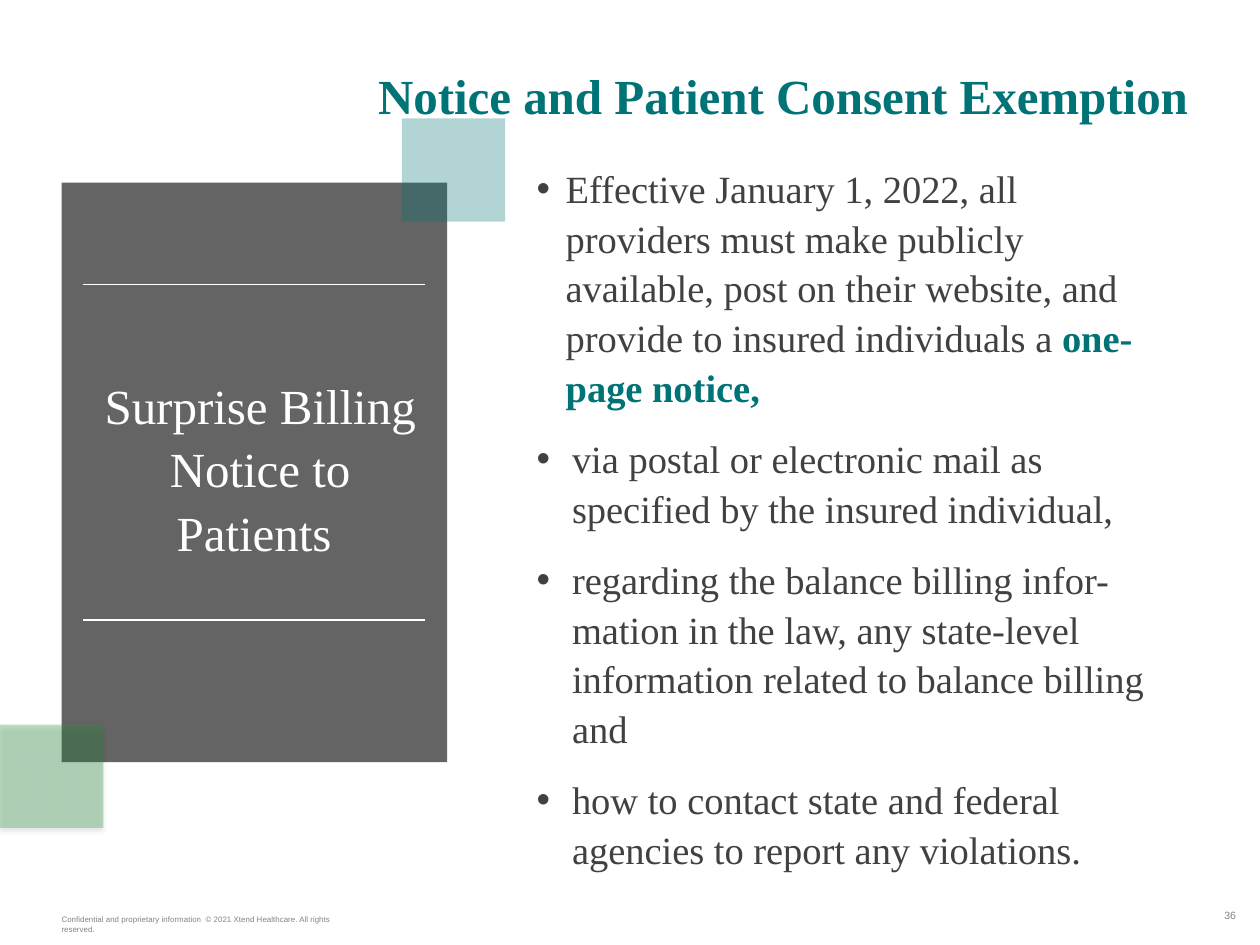
from dataclasses import dataclass

from lxml import etree
from pptx import Presentation
from pptx.dml.color import RGBColor
from pptx.enum.shapes import MSO_CONNECTOR, MSO_SHAPE
from pptx.enum.text import MSO_ANCHOR, MSO_AUTO_SIZE, PP_ALIGN
from pptx.oxml.ns import qn
from pptx.util import Inches, Pt

RECT = MSO_SHAPE.RECTANGLE
LINE = MSO_CONNECTOR.STRAIGHT
TOP, MIDDLE = MSO_ANCHOR.TOP, MSO_ANCHOR.MIDDLE
LEFT, CENTER, RIGHT = PP_ALIGN.LEFT, PP_ALIGN.CENTER, PP_ALIGN.RIGHT


@dataclass(frozen=True)
class Theme:
    serif: str = "Times New Roman"
    sans: str = "Arial"
    teal: str = "007377"
    green: str = "2C9942"
    panel: str = "4A4A4A"
    ink: str = "414141"
    gray: str = "838383"
    white: str = "FFFFFF"
    head: float = 28
    body: float = 22
    page: float = 6
    foot: float = 4.5
    lead: float = 1.08
    gap: float = 12


T = Theme()

# Each point is a list of (text, stressed) runs
POINTS = [
    [("Effective January 1, 2022, all providers must make publicly available, "
      "post on their website, and provide to insured individuals a ", False),
     ("one-page notice,", True)],
    [("via postal or electronic mail as specified by the insured individual,", False)],
    [("regarding the balance billing infor-mation in the law, any state-level "
      "information related to balance billing and", False)],
    [("how to contact state and federal agencies to report any violations.", False)],
]


def place(shape, box):
    shape.left, shape.top, shape.width, shape.height = map(Inches, box)


def frame(shape, anchor=TOP, pad=(0.1, 0.05)):
    tf = shape.text_frame
    tf.word_wrap = True
    tf.auto_size = MSO_AUTO_SIZE.NONE
    tf.vertical_anchor = anchor
    tf.margin_left = tf.margin_right = Inches(pad[0])
    tf.margin_top = tf.margin_bottom = Inches(pad[1])
    return tf


def add_run(para, text, size, color, font=T.serif, bold=False):
    run = para.add_run()
    run.text = text
    run.font.name = font
    run.font.size = Pt(size)
    run.font.bold = bold
    run.font.color.rgb = RGBColor.from_string(color)


def write(tf, text, size, color, font=T.serif, align=LEFT, bold=False):
    para = tf.paragraphs[0]
    para.alignment = align
    para.line_spacing = T.lead
    add_run(para, text, size, color, font, bold)


def add_text(slide, box, text, size, color, font=T.serif, align=LEFT, pad=(0.1, 0.05)):
    shape = slide.shapes.add_textbox(*map(Inches, box))
    write(frame(shape, pad=pad), text, size, color, font, align)


def add_block(slide, box, color, alpha):
    block = slide.shapes.add_shape(RECT, *map(Inches, box))
    block.shadow.inherit = False
    block.line.fill.background()
    block.fill.solid()
    block.fill.fore_color.rgb = RGBColor.from_string(color)
    tint = block.fill._xPr.find(".//" + qn("a:srgbClr"))
    etree.SubElement(tint, qn("a:alpha"), val=str(alpha * 1000))
    return block


def add_shade(block):
    effects = block._element.spPr.find(qn("a:effectLst"))
    shade = etree.SubElement(effects, qn("a:outerShdw"), blurRad=str(Pt(3.1)),
                             dist=str(Pt(1.8)), dir="5400000", rotWithShape="0")
    tint = etree.SubElement(shade, qn("a:srgbClr"), val="000000")
    etree.SubElement(tint, qn("a:alpha"), val="35000")


def add_rule(slide, left, right, y):
    rule = slide.shapes.add_connector(LINE, *map(Inches, (left, y, right, y)))
    rule.line.color.rgb = RGBColor.from_string(T.white)
    rule.line.width = Pt(0.75)
    etree.SubElement(rule._element.spPr, qn("a:effectLst"))


def set_bullet(para, indent):
    props = para._p.get_or_add_pPr()
    props.set("marL", str(Inches(indent)))
    props.set("indent", str(-Inches(indent)))
    etree.SubElement(props, qn("a:buFont"), typeface=T.sans)
    etree.SubElement(props, qn("a:buChar"), char="•")


def fill_list(shape, points):
    tf = frame(shape, MIDDLE, (0, 0))
    for i, runs in enumerate(points):
        para = tf.add_paragraph() if i else tf.paragraphs[0]
        set_bullet(para, 0.28 if i else 0.23)
        para.alignment = LEFT
        para.line_spacing = T.lead
        para.space_before = Pt(T.gap if i else 0)
        para.space_after = Pt(0)
        for text, stressed in runs:
            add_run(para, text, T.body, T.teal if stressed else T.ink, bold=stressed)


def main():
    prs = Presentation()
    prs.slide_width, prs.slide_height = Inches(10), Inches(7.5)
    slide = prs.slides.add_slide(prs.slide_layouts[1])

    # Title and list
    title, body = slide.placeholders
    place(title, (2.9, 0.43, 7.1, 0.57))
    write(frame(title), "Notice and Patient Consent Exemption", T.head, T.teal, bold=True)
    place(body, (4.26, 1.34, 5.04, 5.52))
    fill_list(body, POINTS)

    # Side panel with rules and corner squares
    add_block(slide, (0.49, 1.45, 3.06, 4.6), T.panel, 85)
    for y in (2.26, 4.92):
        add_rule(slide, 0.66, 3.37, y)
    add_block(slide, (3.19, 0.94, 0.82, 0.82), T.teal, 30)
    add_shade(add_block(slide, (0, 5.75, 0.82, 0.82), T.green, 30))
    add_text(slide, (0.71, 2.89, 2.71, 1.51), "Surprise Billing Notice to Patients ",
             T.head, T.white, align=CENTER)

    # Footer
    add_text(slide, (0.39, 7.2, 2.57, 0.25),
             "Confidential and proprietary information  © 2021 Xtend Healthcare. "
             "All rights reserved.", T.foot, T.gray, T.sans)
    add_text(slide, (9.24, 7.16, 0.57, 0.27), "36", T.page, T.gray, T.sans, RIGHT, (0, 0.05))

    prs.save("out.pptx")


if __name__ == "__main__":
    main()
